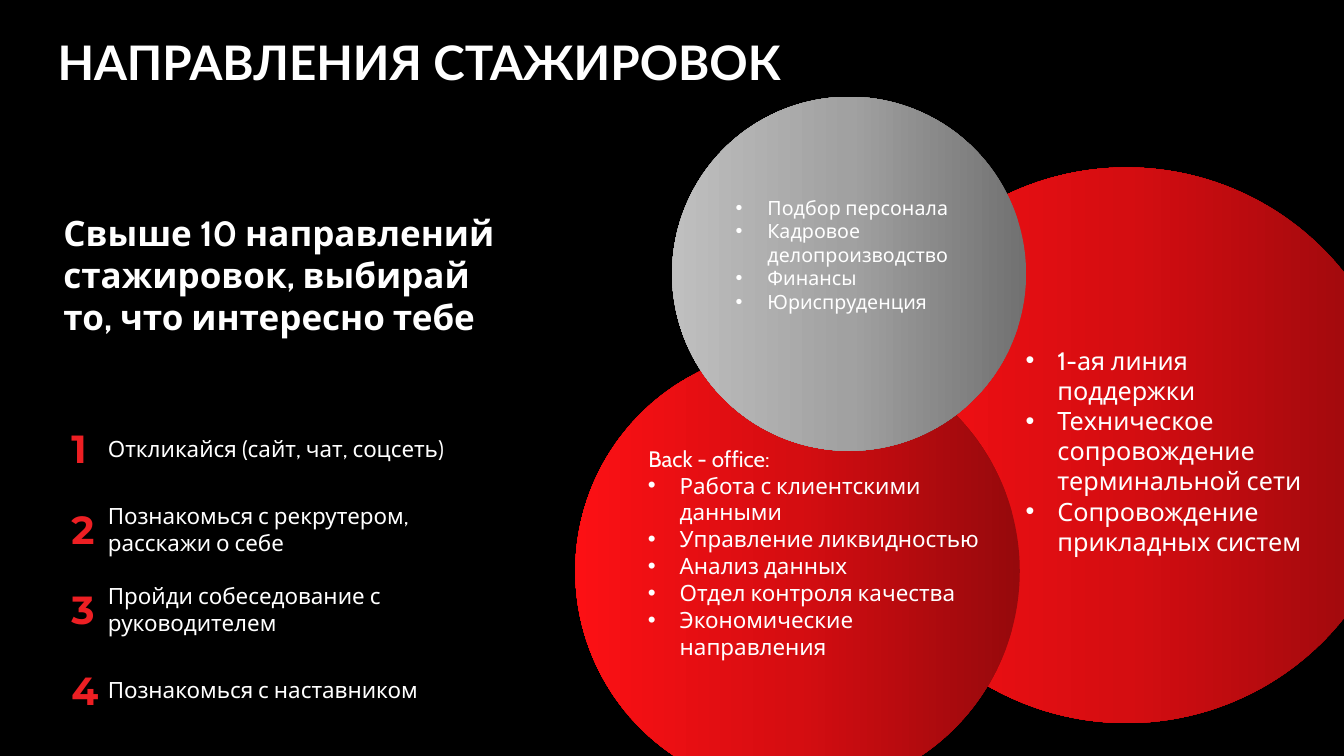
from lxml import etree
from pptx import Presentation
from pptx.dml.color import RGBColor
from pptx.enum.shapes import MSO_SHAPE
from pptx.enum.text import MSO_ANCHOR, MSO_AUTO_SIZE, PP_ALIGN
from pptx.oxml.ns import qn
from pptx.util import Cm, Pt

OVAL = MSO_SHAPE.OVAL
TOP, MIDDLE = MSO_ANCHOR.TOP, MSO_ANCHOR.MIDDLE
LEFT, CENTER = PP_ALIGN.LEFT, PP_ALIGN.CENTER
NO_AUTOFIT = MSO_AUTO_SIZE.NONE
TITLE_ONLY = 5

COLORS = {"background": "000000", "text": "FFFFFF", "number": "ED1F23"}
GRADIENTS = {
    "red": ("96090C", "D50D11", "FC1014"),
    "grey": ("717171", "A1A1A1", "BFBFBF"),
}
TITLE_INSETS = (0, 0.03, 0, 0)
LABEL_INSETS = (0.15, 0.15, 0.15, 0.15)
NUMBER_INSETS = (0.25, 0.13, 0.25, 0.13)

STEPS = [
    ["Откликайся (сайт, чат, соцсеть)"],
    ["Познакомься с рекрутером,", "расскажи о себе"],
    ["Пройди собеседование с руководителем"],
    ["Познакомься с наставником"],
]
SUPPORT = [
    "1-ая линия поддержки",
    "Техническое сопровождение терминальной сети",
    "Сопровождение прикладных систем",
]
STAFF = ["Подбор персонала", "Кадровое делопроизводство", "Финансы", "Юриспруденция"]
BACK_OFFICE = [
    "Работа с клиентскими данными",
    "Управление ликвидностью",
    "Анализ данных",
    "Отдел контроля качества",
    "Экономические направления",
]


def set_frame(frame, insets, anchor):
    frame.word_wrap = True
    frame.auto_size = NO_AUTOFIT
    frame.vertical_anchor = anchor
    (frame.margin_left, frame.margin_top,
     frame.margin_right, frame.margin_bottom) = map(Cm, insets)


def set_font(paragraph, name, size, color="text", bold=False):
    font = paragraph.font
    font.name, font.size, font.bold = name, Pt(size), bold
    font.color.rgb = RGBColor.from_string(COLORS[color])


def set_bullet(paragraph):
    properties = paragraph._p.get_or_add_pPr()
    properties.set("marL", str(Cm(0.87)))
    properties.set("indent", str(-Cm(0.8)))
    etree.SubElement(properties, qn("a:buFont")).set("typeface", "Arial")
    etree.SubElement(properties, qn("a:buChar")).set("char", "•")


def add_text(shapes, box, lines, size, insets, anchor=TOP, name="Cabin",
             color="text", bold=False):
    """Add a text box with one paragraph per line and return its paragraphs."""
    frame = shapes.add_textbox(*map(Cm, box)).text_frame
    set_frame(frame, insets, anchor)
    frame.text = "\n".join(lines)
    for paragraph in frame.paragraphs:
        set_font(paragraph, name, size, color, bold)
    return frame.paragraphs


def add_title(slide, box):
    title = slide.shapes.title
    title.left, title.top, title.width, title.height = map(Cm, box)
    set_frame(title.text_frame, TITLE_INSETS, TOP)
    title.text_frame.text = "НАПРАВЛЕНИЯ СТАЖИРОВОК"
    heading = title.text_frame.paragraphs[0]
    heading.alignment = LEFT
    heading.space_before = Pt(1)
    set_font(heading, "Lato", 34, bold=True)


def add_circle(slide, left, top, diameter, gradient):
    circle = slide.shapes.add_shape(OVAL, Cm(left), Cm(top), Cm(diameter), Cm(diameter))
    circle.shadow.inherit = False
    circle.line.fill.background()
    circle.fill.gradient()
    circle.fill.gradient_angle = 180
    stops = circle._element.spPr.find(qn("a:gradFill")).find(qn("a:gsLst"))
    for stop in list(stops):
        stops.remove(stop)
    for position, color in zip((0, 50000, 100000), GRADIENTS[gradient]):
        stop = etree.SubElement(stops, qn("a:gs"), pos=str(position))
        etree.SubElement(stop, qn("a:srgbClr"), val=color)


def add_directions(slide, box, items, size, heading=None):
    """Add a bulleted list, with an optional unbulleted heading."""
    lines = [heading, *items] if heading else items
    paragraphs = add_text(slide.shapes, box, lines, size, TITLE_INSETS)
    for paragraph in paragraphs[1 if heading else 0:]:
        set_bullet(paragraph)
        properties = paragraph._p.pPr
        properties.append(properties.find(qn("a:defRPr")))
    if heading:
        paragraphs[0]._p.pPr.set("marL", str(Cm(0.08)))


def add_steps(slide, box):
    left, top, width, height = box
    number_width, number_height, label_offset = 0.53, 1.45, 1.02
    pitch = (height - number_height) / (len(STEPS) - 1)
    for index, lines in enumerate(STEPS):
        step = slide.shapes.add_group_shape().shapes
        number_top = top + index * pitch
        label_height = 0.97 if len(lines) == 1 else 1.65
        label_top = number_top + (number_height - label_height) / 2
        add_text(step, (left + label_offset, label_top, width - label_offset, label_height),
                 lines, 16, LABEL_INSETS, MIDDLE)
        number = add_text(step, (left, number_top, number_width, number_height),
                          [str(index + 1)], 28, NUMBER_INSETS,
                          name="Montserrat", color="number", bold=True)[0]
        number.alignment = CENTER
        number.space_after = Pt(12)


def build_directions_slide(presentation):
    slide = presentation.slides.add_slide(presentation.slide_layouts[TITLE_ONLY])
    slide.background.fill.solid()
    slide.background.fill.fore_color.rgb = RGBColor.from_string(COLORS["background"])
    add_title(slide, (1.45, 0.81, 33.25, 1.5))
    add_text(slide.shapes, (1.45, 5.18, 11.2, 3.48),
             ["Свыше 10 направлений стажировок, выбирай то, что интересно тебе"],
             25, LABEL_INSETS, MIDDLE, bold=True)
    add_circle(slide, 21.39, 4.22, 14, "red")
    add_circle(slide, 14.5, 8.79, 11.2, "red")
    add_circle(slide, 16.94, 2.44, 8.92, "grey")
    add_directions(slide, (25.78, 8.66, 7.59, 4.65), SUPPORT, 18)
    add_directions(slide, (18.47, 4.9, 6.71, 3.02), STAFF, 14)
    add_steps(slide, (1.55, 10.57, 11.94, 7.53))
    add_directions(slide, (16.26, 11.18, 8.64, 5.49), BACK_OFFICE, 16, "Back - office:")


def main():
    presentation = Presentation()
    presentation.slide_width, presentation.slide_height = Cm(33.87), Cm(19.05)
    build_directions_slide(presentation)
    presentation.save("out.pptx")


if __name__ == "__main__":
    main()
